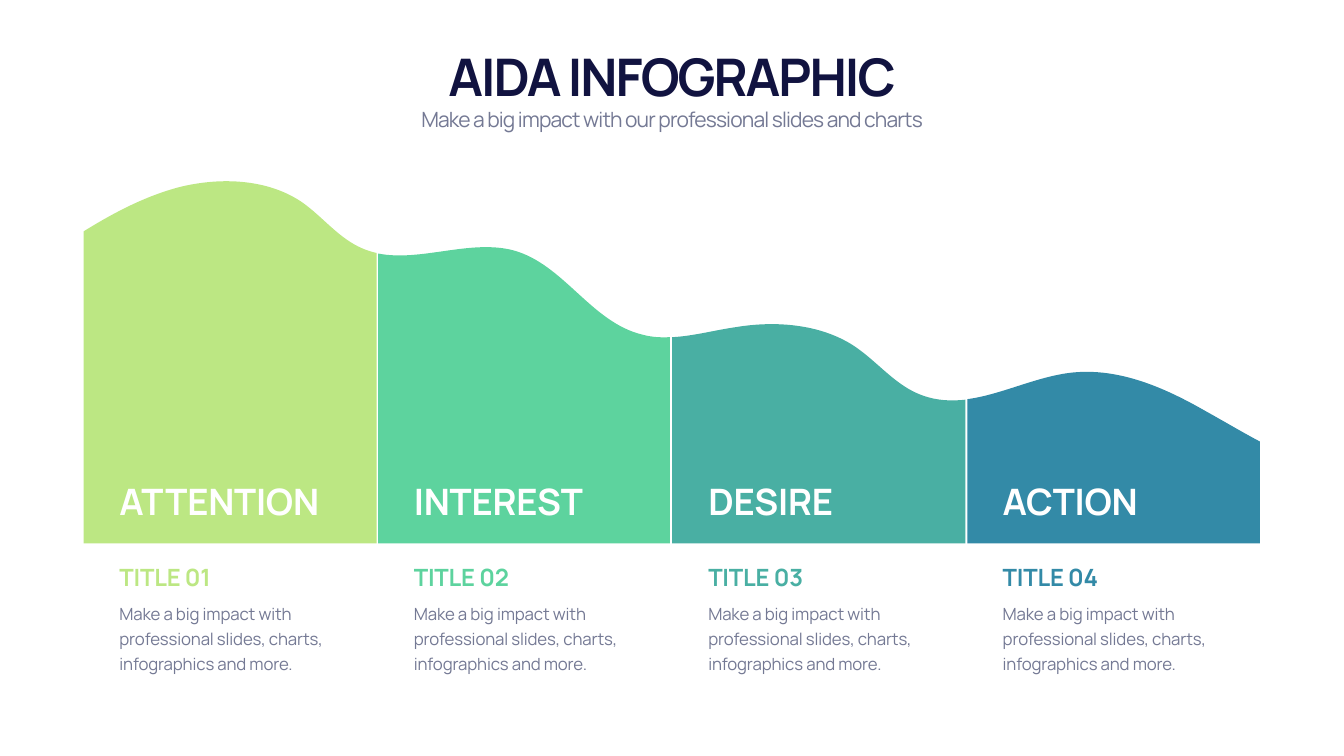
from lxml.etree import SubElement
from pptx import Presentation
from pptx.dml.color import RGBColor as RGB
from pptx.enum.text import MSO_ANCHOR as Anchor, MSO_AUTO_SIZE as AutoSize, PP_ALIGN as Align
from pptx.oxml.ns import qn
from pptx.util import Pt

# Content
TITLE = "AIDA INFOGRAPHIC"
SUBTITLE = "Make a big impact with our professional slides and charts"
BODY = "Make a big impact with professional slides, charts, infographics and more."

# Each crest runs left to right: a start point, then three Bézier points per curve
STAGES = [
    {"name": "ATTENTION", "title": "TITLE 01", "color": "BCE783", "crest": [
        (119.5, 330.5),
        (162.7, 303.8), (207.4, 280.1), (257, 267.1),
        (316.1, 252.7), (383, 255.6), (432, 289.4),
        (461.5, 310.3), (483.8, 340.6), (517.7, 355),
        (524.2, 357.8), (531.4, 360), (537.8, 361.4)]},
    {"name": "INTEREST", "title": "TITLE 02", "color": "5DD39E", "crest": [
        (540, 362.2),
        (601.2, 374.4), (671.8, 341.3), (733.7, 357.8),
        (805.7, 378), (843.8, 460.1), (917.3, 478.1),
        (930.2, 481.7), (943.9, 482.4), (956.9, 481.7)]},
    {"name": "DESIRE", "title": "TITLE 03", "color": "49AFA3", "crest": [
        (959.8, 481.7),
        (990, 480.2), (1021, 471.6), (1051.2, 467.3),
        (1108.1, 457.9), (1170.7, 463), (1218.2, 493.2),
        (1253.5, 516.2), (1278.7, 551.5), (1318.3, 565.2),
        (1338.5, 572.4), (1358.6, 573.1), (1378.8, 571)]},
    {"name": "ACTION", "title": "TITLE 04", "color": "338AA7", "crest": [
        (1381.7, 570.2),
        (1430.6, 563.8), (1481.8, 537.1), (1532.9, 532.1),
        (1599.8, 525.6), (1664.6, 554.4), (1722.2, 587.5),
        (1748.2, 601.9), (1773.4, 617), (1799.3, 630.7)]},
]

THEME = {
    "font": "Manrope", "dark": "111340", "muted": "747994", "light": "FFFFFF",
    "title": 74, "subtitle": 30, "stage": 52, "heading": 34, "body": 24,
}

# Layout
SLIDE_W, SLIDE_H = 1919.52, 1080
MARGIN = 119.5
BASELINE = 776.2
TEXT_LEFT, TEXT_W, PITCH = 163.5, 332.6, 420.5


def add_text(slide, text, left, top, width, height, *, size, color, bold=False,
             spacing=-0.3, align=Align.LEFT, anchor=Anchor.TOP, line=None):
    box = slide.shapes.add_textbox(Pt(left), Pt(top), Pt(width), Pt(height))
    tf = box.text_frame
    tf.word_wrap = True
    tf.auto_size = AutoSize.SHAPE_TO_FIT_TEXT
    tf.vertical_anchor = anchor
    p = tf.paragraphs[0]
    p.alignment = align
    if line:
        p.line_spacing = Pt(line)
    r = p.add_run()
    r.text = text
    r.font.name = THEME["font"]
    r.font.size = Pt(size)
    r.font.bold = bold
    r.font.color.rgb = RGB.from_string(color)
    r._r.get_or_add_rPr().set("spc", str(round(spacing * 100)))


def bend(sp, curves):
    """Merge the first line segments, three at a time, into cubic curves."""
    lines = sp._element.xpath(".//a:path/a:lnTo")
    for i in range(0, curves * 3, 3):
        curve = SubElement(lines[i].getparent(), qn("a:cubicBezTo"))
        lines[i].addprevious(curve)
        for segment in lines[i:i + 3]:
            curve.append(segment[0])
            segment.getparent().remove(segment)


def add_wave(slide, crest, color):
    corners = [(crest[-1][0], BASELINE), (crest[0][0], BASELINE)]
    start, *rest = [(Pt(x), Pt(y)) for x, y in crest + corners]
    builder = slide.shapes.build_freeform(*start)
    builder.add_line_segments(rest, close=True)
    sp = builder.convert_to_shape()
    bend(sp, len(crest) // 3)
    sp.shadow.inherit = False
    sp.fill.solid()
    sp.fill.fore_color.rgb = RGB.from_string(color)
    sp.line.fill.background()


def main():
    prs = Presentation()
    prs.slide_width, prs.slide_height = Pt(SLIDE_W), Pt(SLIDE_H)
    s = prs.slides.add_slide(prs.slide_layouts[6])

    # Header
    header_w = SLIDE_W - 2 * MARGIN
    add_text(s, TITLE, MARGIN, 59, header_w, 97.2, size=THEME["title"],
             color=THEME["dark"], bold=True, spacing=-2.9,
             align=Align.CENTER, anchor=Anchor.BOTTOM)
    add_text(s, SUBTITLE, MARGIN, 149, header_w, 43.9, size=THEME["subtitle"],
             color=THEME["muted"], spacing=-1.2, align=Align.CENTER)

    # Stages: wave, name on it, heading and text below
    for i, stage in enumerate(STAGES):
        left = TEXT_LEFT + i * PITCH
        add_wave(s, stage["crest"], stage["color"])
        add_text(s, stage["name"], left, 680.4, TEXT_W, 70.6, size=THEME["stage"],
                 color=THEME["light"], bold=True, anchor=Anchor.BOTTOM)
        add_text(s, stage["title"], left, 800, TEXT_W, 48.2, size=THEME["heading"],
                 color=stage["color"], bold=True, anchor=Anchor.BOTTOM)
        add_text(s, BODY, left, 851.8, TEXT_W, 114.5, size=THEME["body"],
                 color=THEME["muted"], spacing=-0.2, line=36)

    prs.save("out.pptx")


if __name__ == "__main__":
    main()
